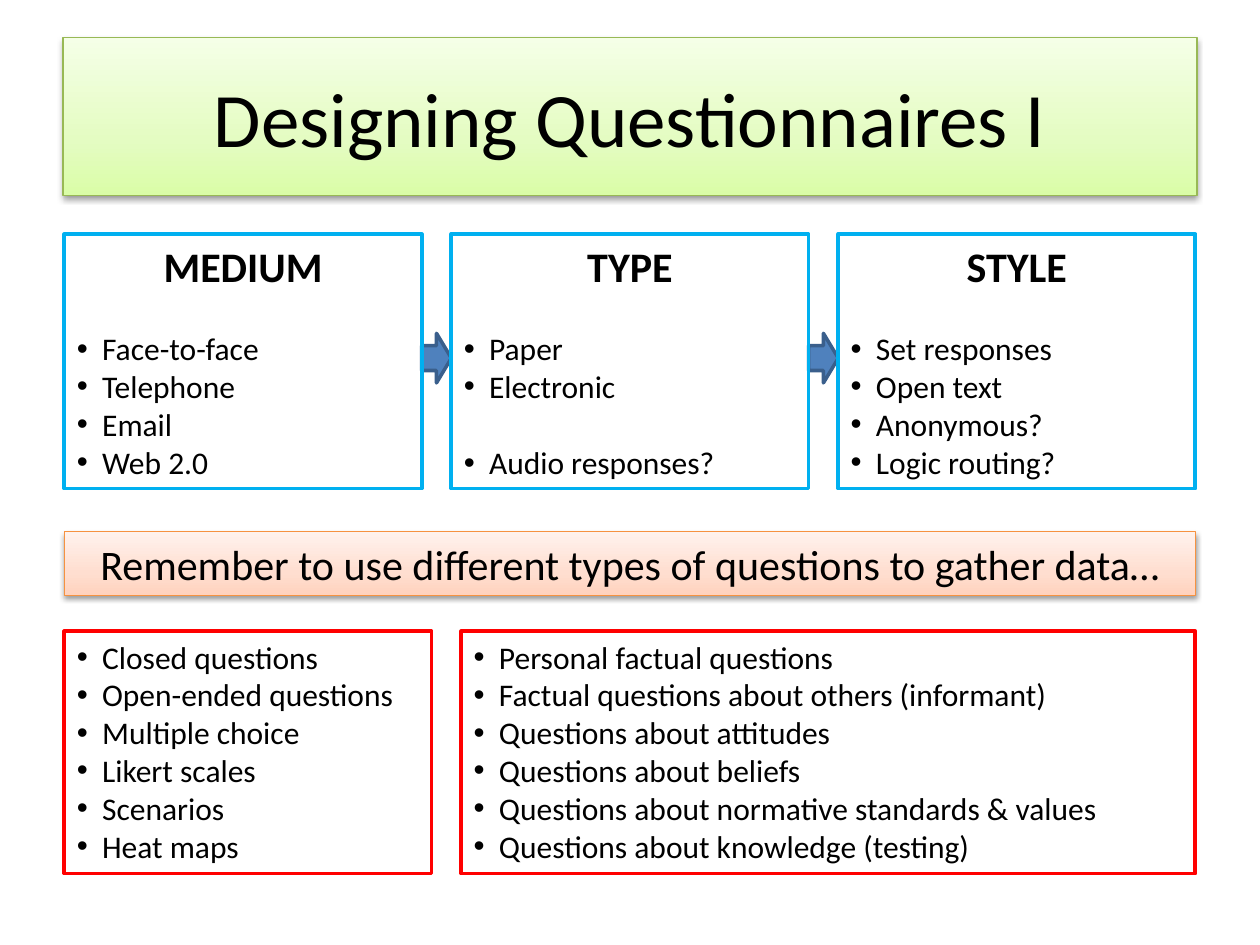
import copy

import lxml.etree
import pptx
import pptx.dml.color
import pptx.enum.shapes
import pptx.enum.text
import pptx.oxml
import pptx.oxml.ns
import pptx.util
from pptx.util import Cm, Pt

COLOURS = {
    "text": "000000", "shadow": "000000",
    "title_line": "98B955", "banner_line": "F69240",
    "step_line": "00B0F0", "list_line": "FF0000",
    "arrow": "4F81BD", "arrow_line": "3A5F8C",
}
GRADIENTS = {
    "title": ["DAFDA7", "E4FCC2", "F5FFE7"],
    "banner": ["FFD2BD", "FFDED0", "FFF2ED"],
}
STEPS = [
    ("MEDIUM", ["Face-to-face", "Telephone", "Email", "Web 2.0"]),
    ("TYPE", ["Paper", "Electronic", "Audio responses?"]),
    ("STYLE", ["Set responses", "Open text", "Anonymous?", "Logic routing?"]),
]
FORMATS = ["Closed questions", "Open-ended questions", "Multiple choice",
           "Likert scales", "Scenarios", "Heat maps"]
TOPICS = ["Personal factual questions",
          "Factual questions about others (informant)",
          "Questions about attitudes", "Questions about beliefs",
          "Questions about normative standards & values",
          "Questions about knowledge (testing)"]
LEFT, WIDTH, GAP = 1.3, 22.8, 0.6
LINE_GAP = 22


def rgb(value):
    """Return a colour object for a hex string."""
    return pptx.dml.color.RGBColor.from_string(value)


def add_box(page, area, line, weight, kind="RECTANGLE"):
    """Add an unfilled outlined shape at area, given in centimetres."""
    preset = getattr(pptx.enum.shapes.MSO_SHAPE, kind)
    box = page.shapes.add_shape(preset, *[Cm(length) for length in area])
    box.shadow.inherit = False
    box.fill.background()
    box.line.color.rgb = rgb(COLOURS[line])
    box.line.width = Pt(weight)
    box.text_frame.word_wrap = True
    box.text_frame.vertical_anchor = pptx.enum.text.MSO_ANCHOR.TOP
    return box


def write_line(para, text, size, bold=False, centred=False):
    """Write one formatted line of text into a paragraph."""
    para.text = text
    align = pptx.enum.text.PP_ALIGN
    para.alignment = align.CENTER if centred else align.LEFT
    for span in para.runs:
        span.font.name = "Calibri"
        span.font.size = Pt(size)
        span.font.bold = bold
        span.font.color.rgb = rgb(COLOURS["text"])


def write_bullets(frame, items):
    """Write bulleted items, starting in the first paragraph if it is empty."""
    for item in items:
        para = frame.paragraphs[0] if not frame.text else frame.add_paragraph()
        write_line(para, item, 18)
        properties = para._p.get_or_add_pPr()
        properties.set("marL", str(Cm(0.51)))
        properties.set("indent", str(-Cm(0.51)))
        for tag, key, value in [("a:buFont", "typeface", "Arial"),
                                ("a:buChar", "char", "•")]:
            bullet = lxml.etree.SubElement(properties, pptx.oxml.ns.qn(tag))
            bullet.set(key, value)


def add_shadow(box):
    """Give a shape a soft shadow below it."""
    effects = box._element.spPr.find(pptx.oxml.ns.qn("a:effectLst"))
    effects.append(pptx.oxml.parse_xml(
        f'<a:outerShdw {pptx.oxml.ns.nsdecls("a")} blurRad="{Pt(3.1)}" '
        f'dist="{Pt(1.6)}" dir="5400000" rotWithShape="0">'
        f'<a:srgbClr val="{COLOURS["shadow"]}"><a:alpha val="38000"/>'
        '</a:srgbClr></a:outerShdw>'))


def add_heading_bar(page, area, name, text, size):
    """Add a shaded bar with one centred line of text."""
    box = add_box(page, area, f"{name}_line", 0.75)
    box.fill.gradient()
    box.fill.gradient_angle = 90
    first = next(box._element.spPr.iter(pptx.oxml.ns.qn("a:gs")))
    first.addnext(copy.deepcopy(first))
    stops = zip(box.fill.gradient_stops, [0, 0.35, 1], GRADIENTS[name])
    for stop, position, colour in stops:
        stop.position = position
        stop.color.rgb = rgb(colour)
    add_shadow(box)
    box.text_frame.vertical_anchor = pptx.enum.text.MSO_ANCHOR.MIDDLE
    write_line(box.text_frame.paragraphs[0], text, size, centred=True)


def add_steps(page, left, top, width, height):
    """Add the three step boxes in a row, joined by arrows."""
    box_width = (width - GAP * (len(STEPS) - 1)) / len(STEPS)
    pitch = box_width + GAP
    for index in range(1, len(STEPS)):
        arrow = add_box(page, (left + index * pitch - GAP, top + 2, GAP, 1),
                        "arrow_line", 2, "RIGHT_ARROW")
        arrow.fill.solid()
        arrow.fill.fore_color.rgb = rgb(COLOURS["arrow"])
    for index, (heading, items) in enumerate(STEPS):
        area = (left + index * pitch, top, box_width, height)
        frame = add_box(page, area, "step_line", 2.25).text_frame
        write_line(frame.paragraphs[0], heading, 24, bold=True, centred=True)
        frame.paragraphs[0].space_after = Pt(LINE_GAP)
        write_bullets(frame, items)
        if heading == "TYPE":
            frame.paragraphs[-1].space_before = Pt(LINE_GAP)


def add_question_lists(page, left, top, width, height):
    """Add the narrow and the wide list, the second twice as wide."""
    narrow = (width - GAP) / 3
    columns = [(left, narrow, FORMATS), (left + narrow + GAP, 2 * narrow, TOPICS)]
    for column_left, column_width, items in columns:
        area = (column_left, top, column_width, height)
        write_bullets(add_box(page, area, "list_line", 2.25).text_frame, items)


def main():
    """Build the slide and save it."""
    deck = pptx.Presentation()
    deck.slide_width, deck.slide_height = Cm(25.4), Cm(19.05)
    page = deck.slides.add_slide(deck.slide_layouts[6])
    add_heading_bar(page, (1.27, 0.76, 22.86, 3.18), "title",
                    "Designing Questionnaires I", 44)
    add_steps(page, LEFT, 4.72, WIDTH, 5.13)
    add_heading_bar(page, (LEFT, 10.72, WIDTH, 1.28), "banner",
                    "Remember to use different types of questions to gather data…", 24)
    add_question_lists(page, LEFT, 12.73, WIDTH, 4.88)
    deck.save("out.pptx")


if __name__ == "__main__":
    main()
